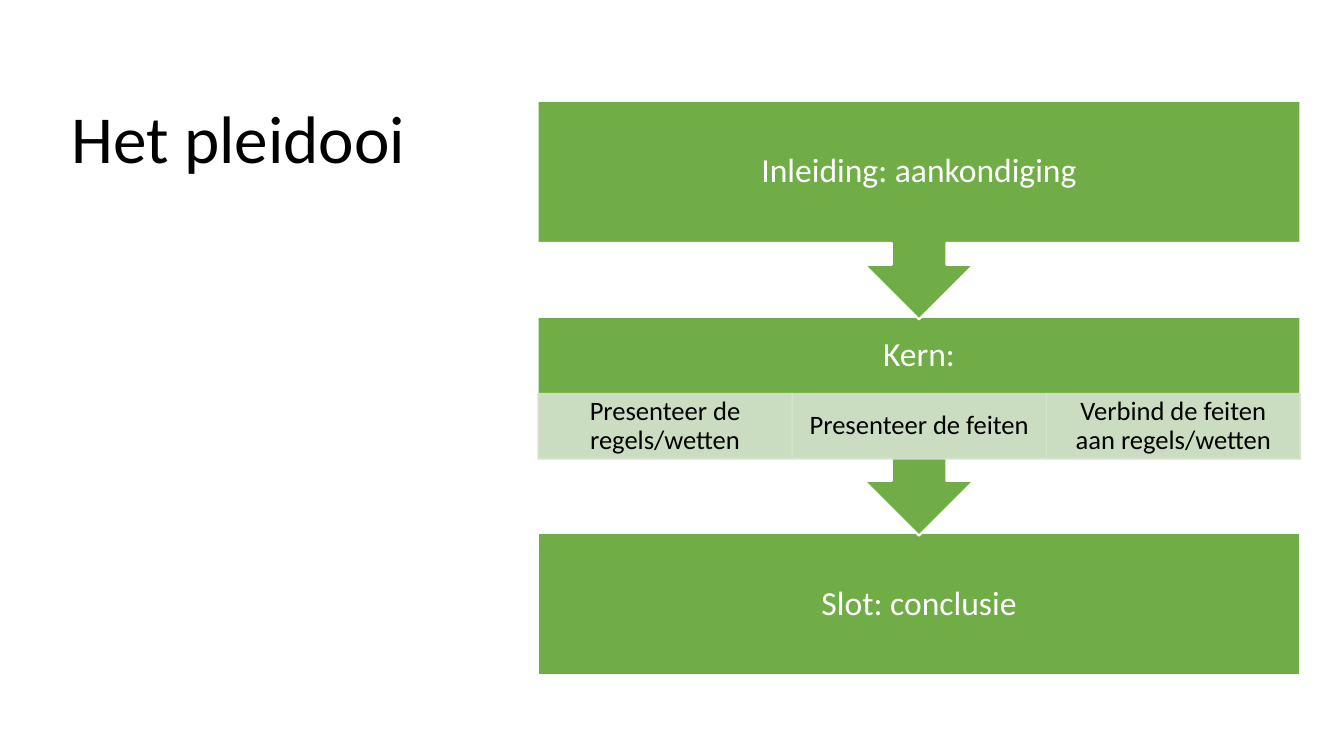
from dataclasses import dataclass

from lxml import etree
from pptx import Presentation
from pptx.dml.color import RGBColor
from pptx.enum import shapes, text
from pptx.oxml.ns import qn
from pptx.util import Pt


@dataclass(frozen=True)
class Theme:
    """Colours, font and type sizes of the slide."""
    font: str = "Calibri"
    green: RGBColor = RGBColor(0x70, 0xAD, 0x47)
    pale: RGBColor = RGBColor(0xD5, 0xE3, 0xCF)
    white: RGBColor = RGBColor(0xFF, 0xFF, 0xFF)
    black: RGBColor = RGBColor(0, 0, 0)
    title_size: float = 48
    step_size: float = 24
    detail_size: float = 19


THEME = Theme()


def write(sp, words, size, color, align, anchor, insets):
    """Fill a shape with one formatted paragraph; insets run left, top, right, bottom."""
    tf = sp.text_frame
    tf.text = words
    tf.word_wrap = True
    tf.auto_size = text.MSO_AUTO_SIZE.NONE
    tf.vertical_anchor = anchor
    tf.margin_left, tf.margin_top, tf.margin_right, tf.margin_bottom = map(Pt, insets)
    p = tf.paragraphs[0]
    p.alignment = align
    p.line_spacing = 0.9
    f = p.runs[0].font
    f.name, f.size, f.color.rgb = THEME.font, Pt(size), color


def add_block(s, kind, box, fill, line, weight):
    """Add a filled and outlined preset shape in the given box."""
    sp = s.shapes.add_shape(kind, *map(Pt, box))
    sp.shadow.inherit = False
    sp.fill.solid()
    sp.fill.fore_color.rgb = fill
    sp.line.color.rgb = line
    sp.line.width = Pt(weight)
    return sp


def add_title(s, box, words):
    """Move the title placeholder into the box and set its text."""
    sp = s.shapes.title
    sp.left, sp.top, sp.width, sp.height = map(Pt, box)
    write(sp, words, THEME.title_size, THEME.black, text.PP_ALIGN.LEFT,
          text.MSO_ANCHOR.TOP, (7.2, 3.6, 7.2, 3.6))


def add_details(s, box, details):
    """Split the box into equal translucent cells, one per detail."""
    x, y, w, h = box
    cell_w = w / len(details)
    for i, words in enumerate(details):
        sp = add_block(s, shapes.MSO_SHAPE.RECTANGLE, (x + i * cell_w, y, cell_w, h),
                       THEME.pale, THEME.pale, 1)
        for clr in sp._element.spPr.iter(qn("a:srgbClr")):
            etree.SubElement(clr, qn("a:alpha"), val="90000")
        write(sp, words, THEME.detail_size, THEME.black, text.PP_ALIGN.CENTER,
              text.MSO_ANCHOR.MIDDLE, (10.8, 2.2, 10.8, 2.2))


def add_flow(s, box, steps):
    """Stack the steps down the box, each pointing at the next one."""
    x, y, w, h = box
    block_h = 101.5
    pitch = (h - block_h) / (len(steps) - 1)
    heading_h, details_h, inset = 54.7, 46.8, 13.7
    for i, (words, details) in reversed(list(enumerate(steps))):
        top = y + i * pitch
        last = i == len(steps) - 1
        kind = shapes.MSO_SHAPE.RECTANGLE if last else shapes.MSO_SHAPE.DOWN_ARROW_CALLOUT
        sp = add_block(s, kind, (x, top, w, block_h if last else pitch + 1.8),
                       THEME.green, THEME.white, 1.5)
        bottom = inset + (details_h if details else 0)
        write(sp, words, THEME.step_size, THEME.white, text.PP_ALIGN.CENTER,
              text.MSO_ANCHOR.MIDDLE, (inset, inset, inset, bottom))
        if details:
            add_details(s, (x + 0.3, top + heading_h, w - 0.4, details_h), details)


def main():
    """Build the slide and save it."""
    prs = Presentation()
    prs.slide_width, prs.slide_height = Pt(960), Pt(540)
    s = prs.slides.add_slide(prs.slide_layouts[5])
    add_title(s, (44, 72, 259, 416), "Het pleidooi")
    add_flow(s, (384, 72, 545, 410.3), [
        ("Inleiding: aankondiging", []),
        ("Kern:", ["Presenteer de regels/wetten", "Presenteer de feiten",
                   "Verbind de feiten aan regels/wetten"]),
        ("Slot: conclusie", []),
    ])
    prs.save("out.pptx")


if __name__ == "__main__":
    main()
